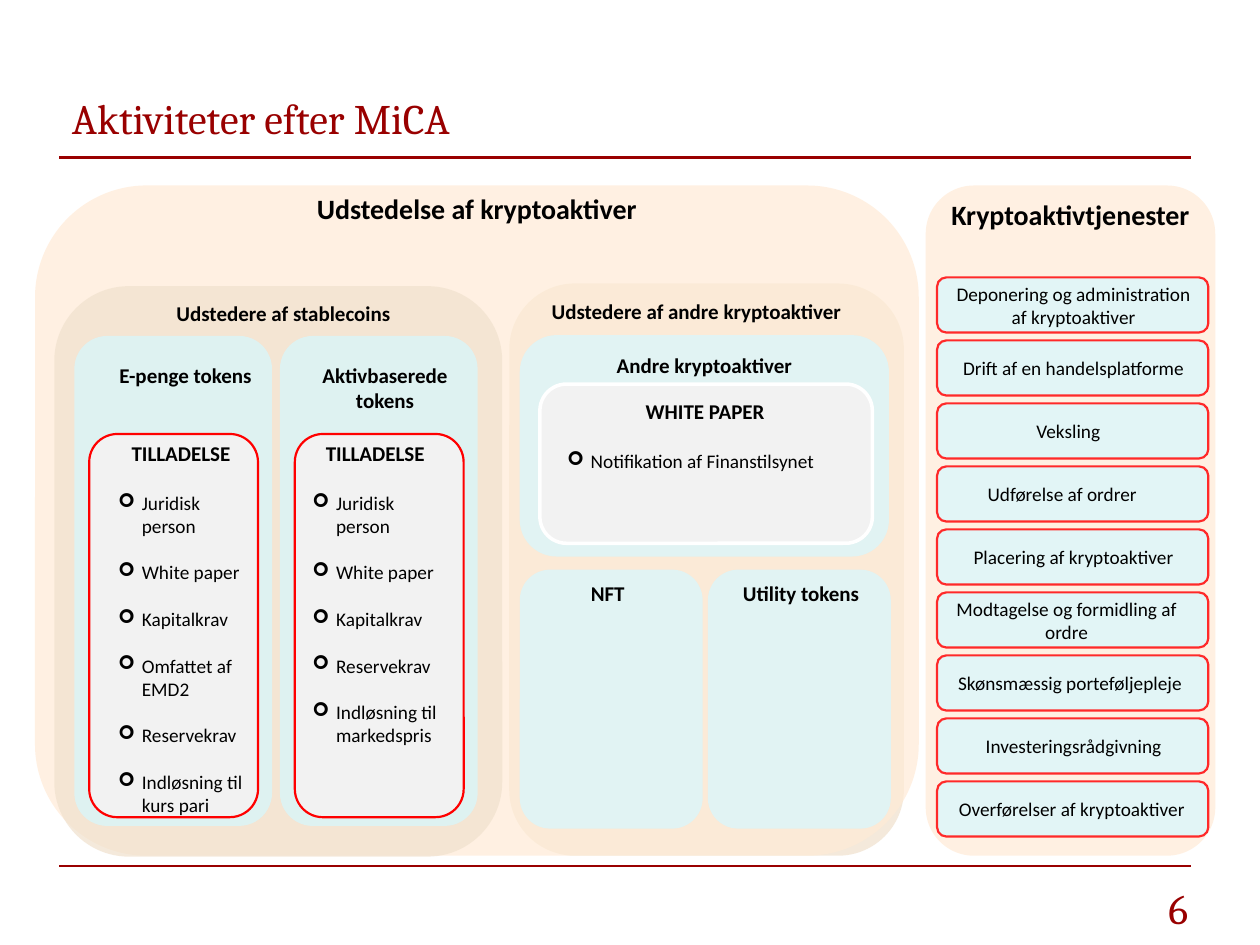
from dataclasses import dataclass

from lxml.etree import SubElement
from pptx import Presentation
from pptx.dml.color import RGBColor
from pptx.enum.shapes import MSO_CONNECTOR as CONN, MSO_SHAPE as SHAPE
from pptx.enum.text import MSO_ANCHOR as ANCHOR, PP_ALIGN as ALIGN
from pptx.oxml.ns import qn
from pptx.util import Pt


@dataclass(frozen=True)
class Theme:
    """Colours, fonts and type sizes of the slide."""
    accent: str = "990000"
    ink: str = "000000"
    peach: str = "FFEBD6"
    sand: str = "F0E1CD"
    aqua: str = "D6F8FF"
    grey: str = "F2F2F2"
    white: str = "FFFFFF"
    red: str = "FF0000"
    soft_red: str = "FF2929"
    serif: str = "Cambria"
    sans: str = "Calibri"
    title: int = 24
    region: int = 16
    head: int = 12
    body: int = 11


T = Theme()
E_MONEY = ["Juridisk person", "White paper", "Kapitalkrav", "Omfattet af EMD2",
           "Reservekrav", "Indløsning til kurs pari"]
ASSET_BASED = ["Juridisk person", "White paper", "Kapitalkrav", "Reservekrav",
               "Indløsning til markedspris"]
SERVICES = [
    ("Deponering og administration af kryptoaktiver", 0),
    ("Drift af en handelsplatforme", 0),
    ("Veksling", -3),
    ("Udførelse af ordrer", -6.5),
    ("Placering af kryptoaktiver", 0),
    ("Modtagelse og formidling af ordre", -4),
    ("Skønsmæssig porteføljepleje", -2),
    ("Investeringsrådgivning", 0),
    ("Overførelser af kryptoaktiver", -1),
]


def add_panel(s, x, y, w, h, fill, line=None, width=1.25, alpha=None):
    """Draw a rounded panel, optionally outlined or see-through."""
    sp = s.shapes.add_shape(SHAPE.ROUNDED_RECTANGLE, Pt(x), Pt(y), Pt(w), Pt(h))
    sp.shadow.inherit = False
    sp.fill.solid()
    sp.fill.fore_color.rgb = RGBColor.from_string(fill)
    if alpha:
        color = sp._element.spPr.find(qn("a:solidFill")).find(qn("a:srgbClr"))
        SubElement(color, qn("a:alpha"), val=str(alpha * 1000))
    if line:
        sp.line.color.rgb = RGBColor.from_string(line)
        sp.line.width = Pt(width)
    else:
        sp.line.fill.background()


def format_paragraph(p, text, size=T.head, bold=False, font=T.sans, color=T.ink,
                     align=ALIGN.CENTER):
    """Fill one paragraph with formatted text."""
    p.alignment = align
    r = p.add_run()
    r.text = text
    r.font.size, r.font.bold, r.font.name = Pt(size), bold, font
    r.font.color.rgb = RGBColor.from_string(color)


def add_text(s, x, y, w, h, text, anchor=ANCHOR.TOP, **style):
    """Add a wrapped text box and return its text frame."""
    tf = s.shapes.add_textbox(Pt(x), Pt(y), Pt(w), Pt(h)).text_frame
    tf.word_wrap = True
    tf.vertical_anchor = anchor
    format_paragraph(tf.paragraphs[0], text, **style)
    return tf


def add_bullets(tf, items):
    """Append arrow bullets, each set one line apart."""
    for i, item in enumerate(items):
        p = tf.add_paragraph()
        p.space_before = Pt(13.4 if i else 14.6)
        pPr = p._p.get_or_add_pPr()
        pPr.set("marL", str(Pt(13.5)))
        pPr.set("indent", str(-Pt(13.5)))
        SubElement(pPr, qn("a:buFont"), typeface="Wingdings")
        SubElement(pPr, qn("a:buChar"), char="➢")
        format_paragraph(p, item, size=T.body, align=ALIGN.LEFT)


def add_rule(s, x, y, w):
    """Draw a horizontal rule."""
    line = s.shapes.add_connector(CONN.STRAIGHT, Pt(x), Pt(y), Pt(x + w), Pt(y))
    line.line.color.rgb = RGBColor.from_string(T.accent)
    line.line.width = Pt(1.25)
    SubElement(line._element.spPr, qn("a:effectLst"))


def frame_region(s, x, y, w, h):
    """Place the slide title, the two rules and the page number."""
    add_rule(s, x, y + 47.5, w)
    add_rule(s, x, y + h - 38.5, w)
    style = dict(size=T.title, font=T.serif, color=T.accent)
    add_text(s, x, y, w, 50, "Aktiviteter efter MiCA", anchor=ANCHOR.MIDDLE,
             align=ALIGN.LEFT, **style)
    add_text(s, x, y + h - 33, w + 5.5, 34, "6", align=ALIGN.RIGHT, **style)


def token_card(s, x, y, w, h, title, items, title_dx, list_dx):
    """Place a stablecoin card with its licence requirements."""
    add_panel(s, x, y, w, h, T.aqua, alpha=70)
    add_text(s, x + title_dx, y + 11.5, 110, 50, title, bold=True)
    add_panel(s, x + 8.5, y + 56, w - 16.5, h - 61, T.grey, line=T.red)
    tf = add_text(s, x + list_dx, y + 56, 86, h - 61, "TILLADELSE", bold=True)
    add_bullets(tf, items)


def stablecoin_region(s, x, y, w, h):
    """Place the stablecoin issuers and their two token cards."""
    add_panel(s, x, y, w, h, T.sand, alpha=70)
    add_text(s, x + 3, y + 4.5, w, 36, "Udstedere af stablecoins", bold=True)
    card = (y + 28.5, 113, h - 46)
    token_card(s, x + 11.5, *card, "E-penge tokens", E_MONEY, 8.5, 18)
    token_card(s, x + 129, *card, "Aktivbaserede tokens", ASSET_BASED, 5, 11.5)


def other_region(s, x, y, w, h):
    """Place the issuers of other crypto-assets and their cards."""
    add_text(s, x - 21.5, y + 5, 257, 36, "Udstedere af andre kryptoaktiver", bold=True)
    left, top = x + 6, y + 29.5
    add_panel(s, left, top, 211, 126.5, T.aqua, alpha=70)
    add_text(s, left + 11, top + 6.5, 189, 30, "Andre kryptoaktiver", bold=True)
    add_panel(s, left + 11.5, top + 28, 190, 91, T.grey, line=T.white, width=2)
    tf = add_text(s, left + 20, top + 32.5, 172, 63, "WHITE PAPER", bold=True)
    add_bullets(tf, ["Notifikation af Finanstilsynet"])
    for i, (title, dx) in enumerate([("NFT", -2), ("Utility tokens", 1)]):
        card_x = left + i * 107.5
        add_panel(s, card_x, top + 134, 104.5, 148, T.aqua, alpha=70)
        add_text(s, card_x + dx, top + 136.5, 104.5, 30, title, bold=True)


def issuance_region(s, x, y, w, h):
    """Place the issuance panel with both groups of issuers."""
    other = (x + 271, y + 56, 225.5, h - 56)
    add_panel(s, *other, T.sand, alpha=70)
    add_panel(s, x, y, w, h, T.peach, alpha=70)
    add_text(s, x, y, w, 27, "Udstedelse af kryptoaktiver", size=T.region, bold=True)
    stablecoin_region(s, x + 11, y + 57.5, 256, h - 57)
    other_region(s, *other)


def service_region(s, x, y, w, h):
    """Place the crypto-asset services as an evenly spaced list."""
    add_panel(s, x, y, w, h, T.peach, alpha=70)
    add_text(s, x - 2, y + 3.5, w + 4, 27, "Kryptoaktivtjenester", size=T.region, bold=True)
    for i, (name, dx) in enumerate(SERVICES):
        row_y = y + 52.5 + i * 36
        add_panel(s, x + 6.5, row_y, 155, 31.5, T.aqua, line=T.soft_red, alpha=70)
        add_text(s, x + 7 + dx, row_y, 155, 31.5, name, anchor=ANCHOR.MIDDLE, size=T.body)


def main():
    """Build the slide and save it."""
    prs = Presentation()
    prs.slide_width, prs.slide_height = Pt(720), Pt(540)
    s = prs.slides.add_slide(prs.slide_layouts[6])
    frame_region(s, 34, 42.5, 646.5, 491)
    issuance_region(s, 20, 106, 505, 383)
    service_region(s, 529, 106, 165.5, 383)
    prs.save("out.pptx")


if __name__ == "__main__":
    main()
